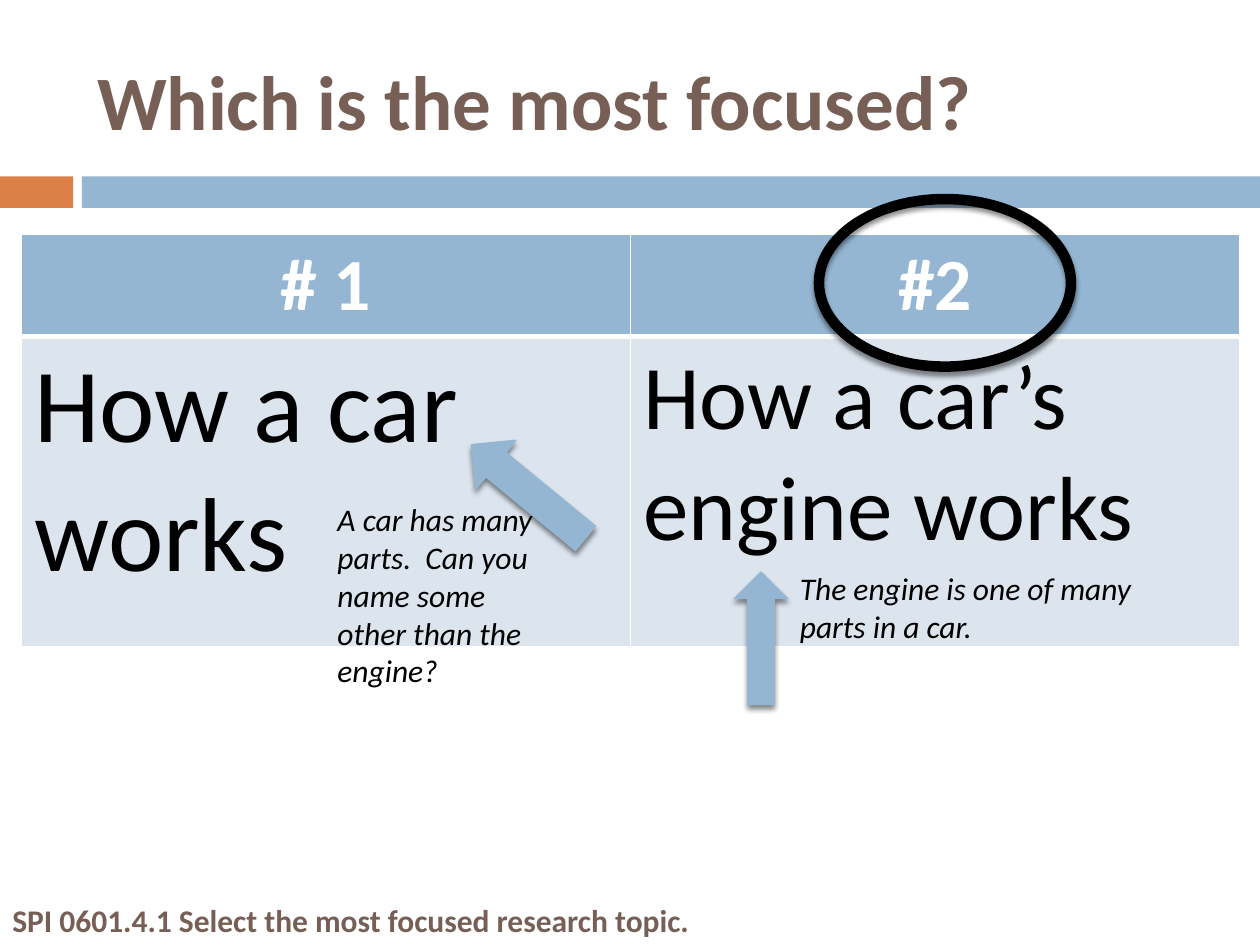
from dataclasses import dataclass

from lxml.etree import SubElement
from pptx import Presentation
from pptx.dml.color import RGBColor
from pptx.enum.shapes import MSO_SHAPE
from pptx.enum.text import MSO_ANCHOR, PP_ALIGN
from pptx.oxml import parse_xml
from pptx.oxml.ns import nsdecls, qn
from pptx.util import Inches, Pt

FONT = "Calibri"
BLUE = RGBColor(0x94, 0xB6, 0xD2)
PALE_BLUE = RGBColor(0xDC, 0xE5, 0xEE)
ORANGE = RGBColor(0xDD, 0x80, 0x47)
BROWN = RGBColor(0x77, 0x5F, 0x55)
BLACK = RGBColor(0, 0, 0)
WHITE = RGBColor(0xFF, 0xFF, 0xFF)


@dataclass
class Box:
    left: float
    top: float
    width: float
    height: float

    def lengths(self) -> tuple:
        return tuple(Inches(n) for n in (self.left, self.top, self.width, self.height))


@dataclass
class Note:
    text: str
    box: Box
    color: RGBColor = BLACK
    bold: bool = False
    italic: bool = False


@dataclass
class Marker:
    kind: MSO_SHAPE
    box: Box
    fill: RGBColor | None
    line: RGBColor
    line_width: float
    rotation: float = 0


@dataclass
class Topic:
    heading: str
    text: str
    size: int


def format_paragraph(paragraph, size: float, color: RGBColor,
                     bold: bool = False, italic: bool = False) -> None:
    font = paragraph.font
    font.name, font.size, font.bold, font.italic = FONT, Pt(size), bold, italic
    font.color.rgb = color


def add_bar(slide, box: Box, color: RGBColor) -> None:
    bar = slide.shapes.add_shape(MSO_SHAPE.RECTANGLE, *box.lengths())
    bar.shadow.inherit = False
    bar.fill.solid()
    bar.fill.fore_color.rgb = color
    bar.line.fill.background()


def add_note(slide, note: Note) -> None:
    frame = slide.shapes.add_textbox(*note.box.lengths()).text_frame
    frame.word_wrap = True
    frame.text = note.text
    format_paragraph(frame.paragraphs[0], 18, note.color, note.bold, note.italic)


def add_marker(slide, marker: Marker) -> None:
    shape = slide.shapes.add_shape(marker.kind, *marker.box.lengths())
    shape.rotation = marker.rotation
    if marker.fill is None:
        shape.fill.background()
    else:
        shape.fill.solid()
        shape.fill.fore_color.rgb = marker.fill
    shape.line.color.rgb = marker.line
    shape.line.width = Pt(marker.line_width)
    # Soft shadow straight below
    shape.shadow.inherit = False
    effects = shape._element.spPr.find(qn("a:effectLst"))
    shadow = SubElement(effects, qn("a:outerShdw"), blurRad=str(Pt(3)),
                        dist=str(Pt(2.4)), dir="5400000", rotWithShape="0")
    color = SubElement(shadow, qn("a:srgbClr"), val=str(BLACK))
    SubElement(color, qn("a:alpha"), val="45000")


def fill_cell(cell, text: str, size: int, color: RGBColor, fill: RGBColor,
              header: bool) -> None:
    cell.text = text
    paragraph = cell.text_frame.paragraphs[0]
    format_paragraph(paragraph, size, color, bold=header)
    if header:
        paragraph.alignment = PP_ALIGN.CENTER
    cell.fill.solid()
    cell.fill.fore_color.rgb = fill
    # The edge between the two rows is thicker
    widths = {"L": 1, "R": 1, "T": 1 if header else 3, "B": 3 if header else 1}
    properties = cell._tc.get_or_add_tcPr()
    for index, (side, width) in enumerate(widths.items()):
        properties.insert(index, parse_xml(
            f'<a:ln{side} {nsdecls("a")} w="{Pt(width)}"><a:solidFill>'
            f'<a:srgbClr val="{WHITE}"/></a:solidFill></a:ln{side}>'))


def add_topic_table(slide, box: Box, topics: list[Topic]) -> None:
    table = slide.shapes.add_table(2, len(topics), *box.lengths()).table
    table.rows[0].height = Inches(0.81)
    table.rows[1].height = Inches(box.height - 0.81)
    for column, topic in enumerate(topics):
        fill_cell(table.cell(0, column), topic.heading, 42, WHITE, BLUE, True)
        fill_cell(table.cell(1, column), topic.text, topic.size, BLACK, PALE_BLUE, False)


def add_title(slide, text: str, box: Box) -> None:
    title = slide.shapes.title
    title.left, title.top, title.width, title.height = box.lengths()
    frame = title.text_frame
    frame.text = text
    frame.vertical_anchor = MSO_ANCHOR.MIDDLE
    paragraph = frame.paragraphs[0]
    paragraph.alignment = PP_ALIGN.LEFT
    format_paragraph(paragraph, 44, BROWN, bold=True)


def main() -> None:
    presentation = Presentation()
    presentation.slide_width, presentation.slide_height = Inches(10), Inches(7.5)
    slide = presentation.slides.add_slide(presentation.slide_layouts[5])

    # Title and band
    add_title(slide, "Which is the most focused?", Box(0.67, 0.25, 8.92, 1.08))
    add_bar(slide, Box(0, 1.4, 0.58, 0.25), ORANGE)
    add_bar(slide, Box(0.65, 1.4, 9.35, 0.25), BLUE)

    # The two topics, with the answer circled
    add_topic_table(slide, Box(0.17, 1.86, 9.67, 3.27), [
        Topic("# 1", "How a car works", 60),
        Topic("#2", "How a car’s engine works", 52),
    ])
    add_marker(slide, Marker(MSO_SHAPE.OVAL, Box(6.5, 1.58, 2, 1.33), None, BLACK, 6))

    # Explanations and their arrows
    add_note(slide, Note("A car has many parts.  Can you name some other than the engine?",
                         Box(2.58, 3.92, 1.92, 1.31), italic=True))
    add_marker(slide, Marker(MSO_SHAPE.RIGHT_ARROW, Box(3.61, 3.65, 1.17, 0.5),
                             BLUE, BLUE, 0.79, 219.4))
    add_note(slide, Note("The engine is one of many parts in a car.",
                         Box(6.25, 4.47, 3.17, 0.71), italic=True))
    add_marker(slide, Marker(MSO_SHAPE.UP_ARROW, Box(5.83, 4.54, 0.42, 1.05),
                             BLUE, BLUE, 0.79))

    # Learning standard
    add_note(slide, Note("SPI 0601.4.1 Select the most focused research topic.",
                         Box(0, 7.1, 10, 0.4), BROWN, bold=True))

    presentation.save("out.pptx")


if __name__ == "__main__":
    main()
